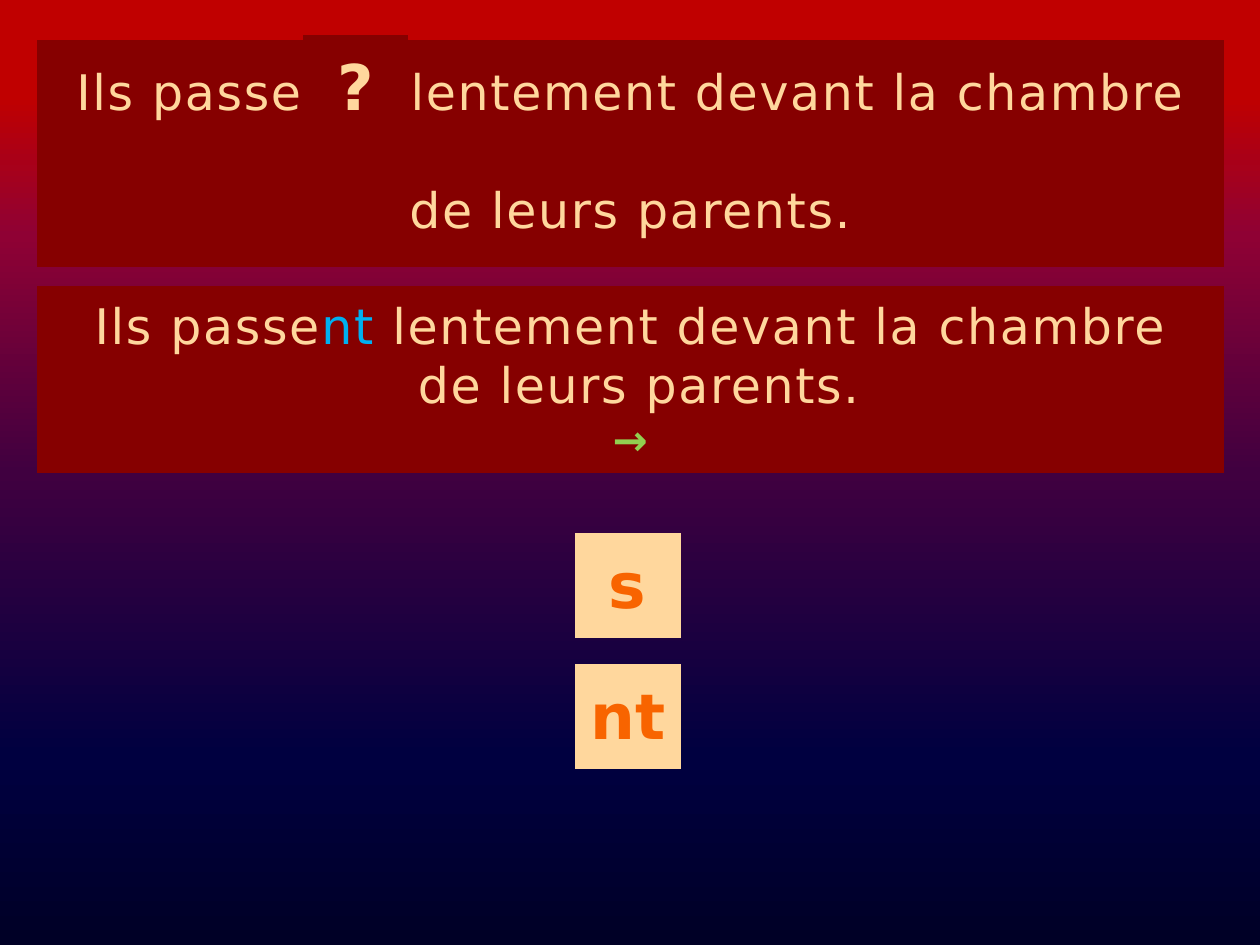
from dataclasses import dataclass

from lxml import etree
from pptx import Presentation
from pptx import util as u
from pptx.dml.color import RGBColor
from pptx.enum import shapes, text
from pptx.oxml import ns

FONT = "DejaVu Sans"
DARK_RED, CREAM, ORANGE = "860000", "FFD79D", "F86400"
BLUE, GREEN = "00B0F0", "92D050"
SKY = [(0, "000026"), (20, "000040"), (50, "400040"), (75, "8F0134"), (90, "C00000")]


@dataclass
class Piece:
    words: str
    color: str = CREAM
    size: float = 28
    bold: bool = False
    spacing: float = 1  # points between letters


@dataclass
class Line:
    pieces: list[Piece]
    before: float = 0
    after: float = 0


@dataclass
class Panel:
    left: float
    top: float
    width: float
    height: float
    fill: str
    lines: list[Line]
    inset_top: float = 0.1
    inset_bottom: float = 0.2


def rgb(color: str) -> RGBColor:
    return RGBColor.from_string(color)


def add_button(slide, left: float, top: float, width: float, height: float):
    button = slide.shapes.add_shape(
        shapes.MSO_SHAPE.ACTION_BUTTON_CUSTOM,
        u.Cm(left), u.Cm(top), u.Cm(width), u.Cm(height))
    button.shadow.inherit = False
    button.line.fill.background()
    return button


def fill_gradient(shape, stops: list[tuple[int, str]]) -> None:
    """Fill with stops running from the bottom edge to the top."""
    shape.fill.gradient()
    gradient = shape._element.spPr.find(ns.qn("a:gradFill"))
    for child in list(gradient):
        gradient.remove(child)
    stop_list = etree.SubElement(gradient, ns.qn("a:gsLst"))
    for percent, color in stops:
        stop = etree.SubElement(stop_list, ns.qn("a:gs"), pos=str(percent * 1000))
        etree.SubElement(stop, ns.qn("a:srgbClr"), val=color)
    etree.SubElement(gradient, ns.qn("a:lin"), ang=str(270 * 60000), scaled="0")


def add_line(paragraph, line: Line) -> None:
    paragraph.alignment = text.PP_ALIGN.CENTER
    paragraph.space_before = u.Pt(line.before)
    paragraph.space_after = u.Pt(line.after)
    for piece in line.pieces:
        run = paragraph.add_run()
        run.text = piece.words
        run.font.name = FONT
        run.font.size = u.Pt(piece.size)
        run.font.bold = piece.bold
        run.font.color.rgb = rgb(piece.color)
        if piece.spacing:
            run._r.get_or_add_rPr().set("spc", str(round(piece.spacing * 100)))


def draw_panel(slide, panel: Panel) -> None:
    button = add_button(slide, panel.left, panel.top, panel.width, panel.height)
    button.fill.solid()
    button.fill.fore_color.rgb = rgb(panel.fill)
    frame = button.text_frame
    frame.word_wrap = False
    frame.vertical_anchor = text.MSO_ANCHOR.MIDDLE
    frame.margin_left = frame.margin_right = u.Cm(0.25)
    frame.margin_top = u.Cm(panel.inset_top)
    frame.margin_bottom = u.Cm(panel.inset_bottom)
    for index, line in enumerate(panel.lines):
        add_line(frame.add_paragraph() if index else frame.paragraphs[0], line)


def ending_tile(left: float, top: float, ending: str, fill: str, color: str) -> Panel:
    label = Piece(ending, color, size=36, bold=True, spacing=0)
    return Panel(left, top, 2.13, 2.13, fill, [Line([label])])


def main() -> None:
    prs = Presentation()
    prs.slide_width, prs.slide_height = u.Cm(25.4), u.Cm(19.05)
    slide = prs.slides.add_slide(prs.slide_layouts[6])

    # Background
    fill_gradient(add_button(slide, 0, 0, 25.4, 19.05), SKY)

    # Sentence with a gap, widened by letter spacing to hold the question mark
    question = Panel(0.74, 0.81, 23.93, 4.57, DARK_RED, [
        Line([Piece("Ils passe"), Piece(" ", spacing=52.5),
              Piece("lentement devant la chambre")]),
        Line([Piece("de leurs parents.")], before=33.5),
    ], inset_top=0.05)

    # Sentence with the right ending
    answer = Panel(0.74, 5.77, 23.93, 3.76, DARK_RED, [
        Line([Piece("Ils passe"), Piece("nt", BLUE),
              Piece(" lentement devant la chambre")]),
        Line([Piece(" de leurs parents.")]),
        Line([Piece("→", GREEN, size=24, bold=True)], after=6),
    ], inset_bottom=0.1)

    # Question mark inside the gap, and the two endings to choose from
    gap_mark = ending_tile(6.1, 0.71, "?", DARK_RED, CREAM)
    choices = [ending_tile(11.59, 10.74 + 2.64 * row, ending, CREAM, ORANGE)
               for row, ending in enumerate(("s", "nt"))]

    for panel in (question, gap_mark, *choices, answer):
        draw_panel(slide, panel)

    prs.save("out.pptx")


if __name__ == "__main__":
    main()
